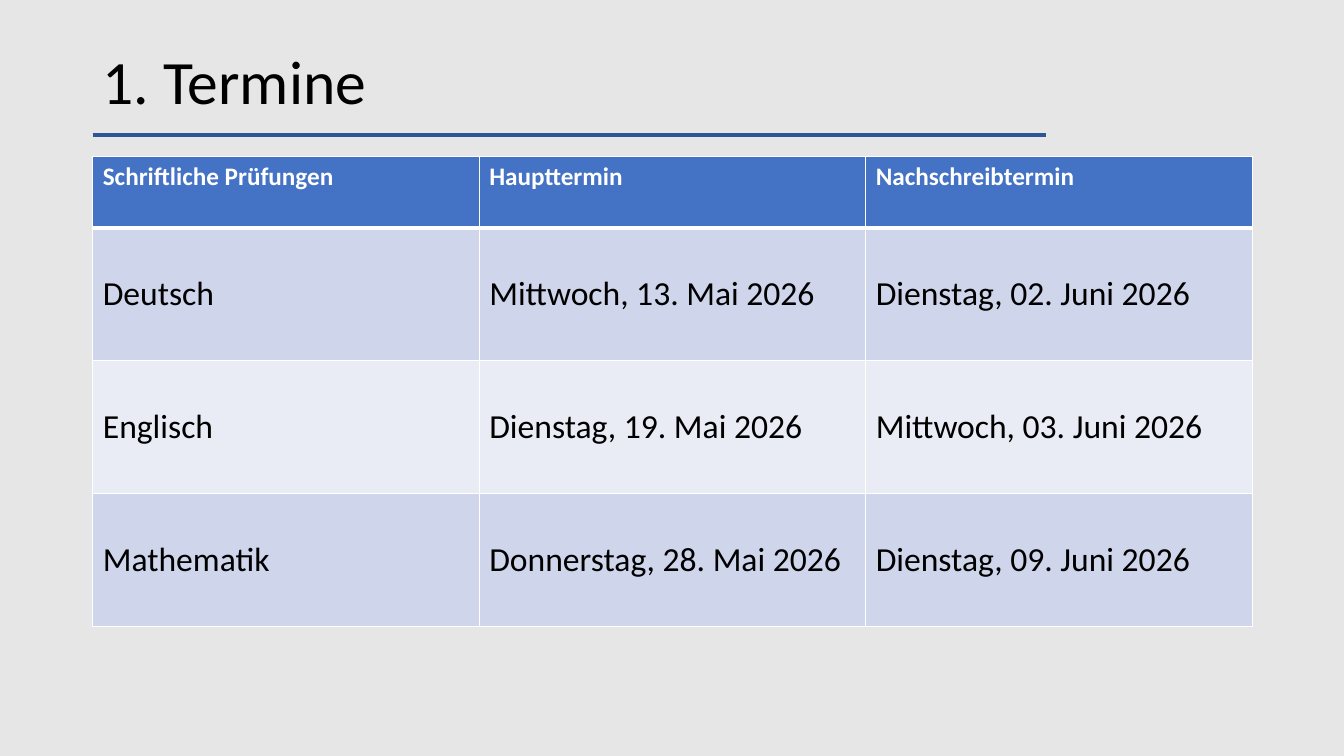
"""Builds the slide listing the dates of the written exams."""
from lxml import etree
from pptx import Presentation
from pptx.dml.color import RGBColor
from pptx.enum import shapes, text
from pptx.oxml import ns
from pptx.util import Inches, Pt

TITLE = "1. Termine"
DATES = [
    ("Schriftliche Prüfungen", "Haupttermin", "Nachschreibtermin"),
    ("Deutsch", "Mittwoch, 13. Mai 2026", "Dienstag, 02. Juni 2026"),
    ("Englisch", "Dienstag, 19. Mai 2026", "Mittwoch, 03. Juni 2026"),
    ("Mathematik", "Donnerstag, 28. Mai 2026", "Dienstag, 09. Juni 2026"),
]
COLORS = {
    "background": "E7E6E6", "rule": "2F5597", "header": "4472C4",
    "odd": "CFD5EA", "even": "E9EBF5", "ink": "000000", "white": "FFFFFF",
}
FONT = "Calibri"
WIDTH, HEIGHT = 13.33, 7.5
LEFT, CONTENT_WIDTH = 0.92, 11.5
TITLE_TOP, TITLE_HEIGHT = 0.4, 0.87
RULE_Y, RULE_END = 1.34, 10.37
TABLE_TOP, HEADER_HEIGHT, ROW_HEIGHT = 1.55, 0.71, 1.32


def color(name):
    return RGBColor.from_string(COLORS[name])


def write(frame, words, size, ink, bold=False):
    paragraph = frame.paragraphs[0]
    run = paragraph.add_run()
    run.text = words
    run.font.name, run.font.size, run.font.bold = FONT, Pt(size), bold
    run.font.color.rgb = color(ink)
    return paragraph


def add_borders(cell, widths):
    properties = cell._tc.get_or_add_tcPr()
    for index, (side, width) in enumerate(widths.items()):
        border = etree.Element(ns.qn(f"a:ln{side}"), w=str(Pt(width)))
        fill = etree.SubElement(border, ns.qn("a:solidFill"))
        etree.SubElement(fill, ns.qn("a:srgbClr"), val=COLORS["white"])
        properties.insert(index, border)


def add_title(slide):
    title = slide.shapes.add_textbox(
        Inches(LEFT), Inches(TITLE_TOP), Inches(CONTENT_WIDTH), Inches(TITLE_HEIGHT))
    title.text_frame.word_wrap = True
    title.text_frame.vertical_anchor = text.MSO_ANCHOR.MIDDLE
    write(title.text_frame, TITLE, 44, "ink").line_spacing = 0.9


def add_rule(slide):
    rule = slide.shapes.add_connector(
        shapes.MSO_CONNECTOR.STRAIGHT,
        Inches(LEFT), Inches(RULE_Y), Inches(RULE_END), Inches(RULE_Y))
    rule.line.color.rgb = color("rule")
    rule.line.width = Pt(3)
    etree.SubElement(rule._element.spPr, ns.qn("a:effectLst"))


def add_dates(slide):
    heights = [HEADER_HEIGHT] + [ROW_HEIGHT] * (len(DATES) - 1)
    dates = slide.shapes.add_table(
        len(DATES), len(DATES[0]), Inches(LEFT), Inches(TABLE_TOP),
        Inches(CONTENT_WIDTH), Inches(sum(heights))).table
    for r, (entries, height) in enumerate(zip(DATES, heights)):
        header = r == 0
        band = "header" if header else "odd" if r % 2 else "even"
        dates.rows[r].height = Inches(height)
        for c, entry in enumerate(entries):
            cell = dates.cell(r, c)
            cell.fill.solid()
            cell.fill.fore_color.rgb = color(band)
            cell.vertical_anchor = (
                text.MSO_ANCHOR.TOP if header else text.MSO_ANCHOR.MIDDLE)
            write(cell.text_frame, entry, 18 if header else 24,
                  "white" if header else "ink", header)
            add_borders(cell, {"L": 1, "R": 1, "T": 3 if r == 1 else 1,
                               "B": 3 if header else 1})


def main():
    deck = Presentation()
    deck.slide_width, deck.slide_height = Inches(WIDTH), Inches(HEIGHT)
    slide = deck.slides.add_slide(deck.slide_layouts[6])
    slide.background.fill.solid()
    slide.background.fill.fore_color.rgb = color("background")
    add_rule(slide)
    add_title(slide)
    add_dates(slide)
    deck.save("out.pptx")


if __name__ == "__main__":
    main()
